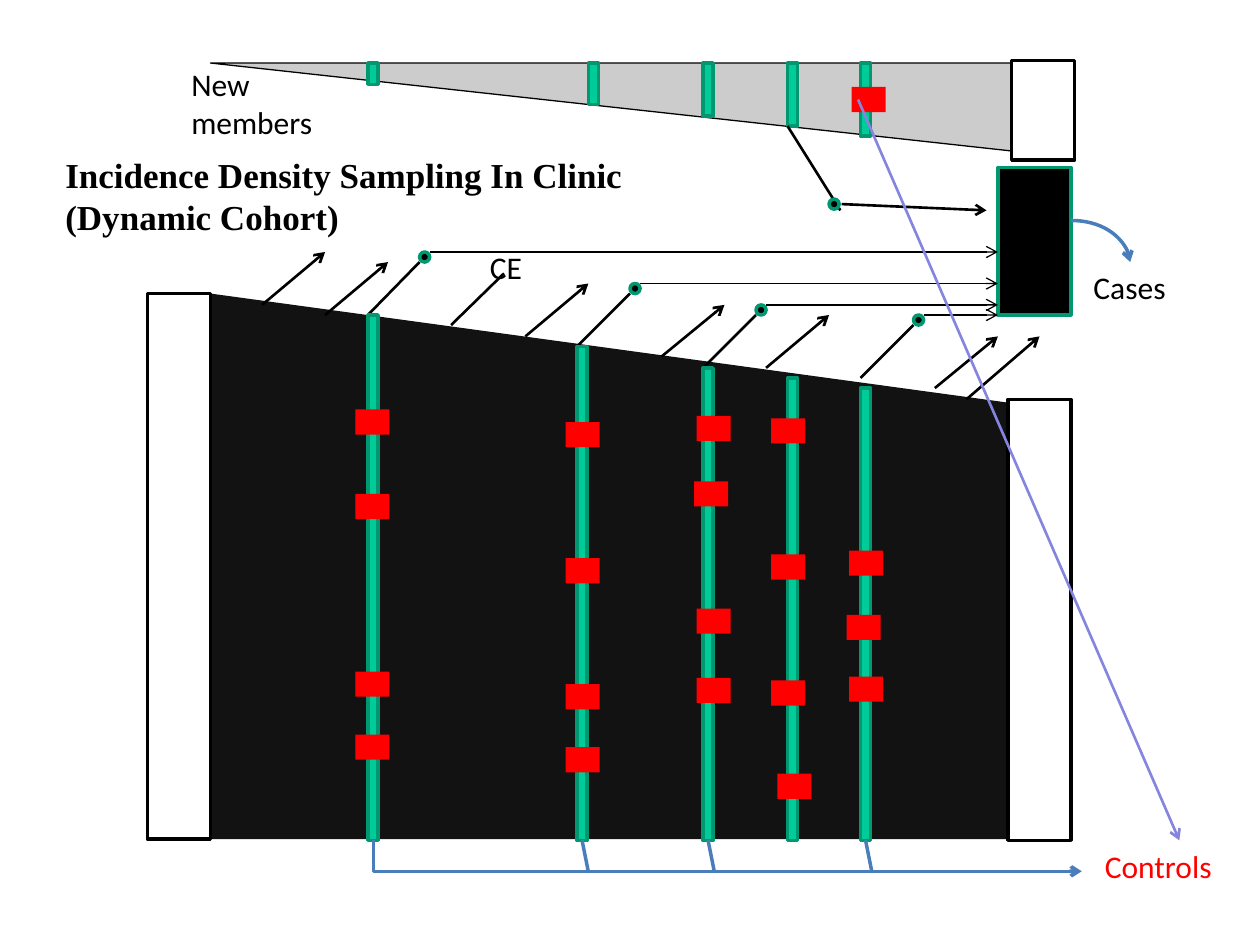
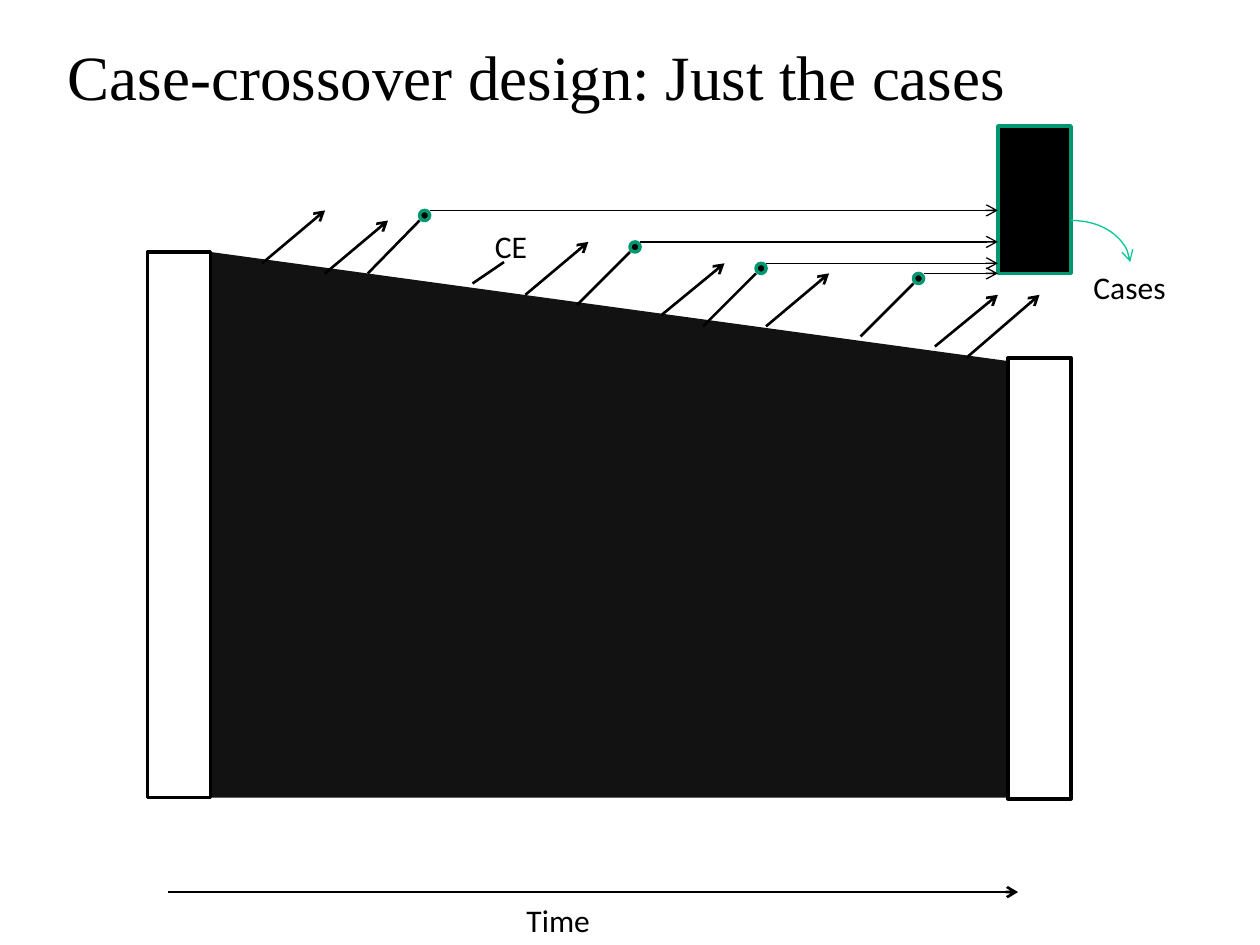
from dataclasses import dataclass
from lxml.etree import SubElement
from pptx import Presentation
from pptx.dml.color import RGBColor
from pptx.enum.shapes import MSO_CONNECTOR as LINK, MSO_SHAPE as FORM
from pptx.enum.text import MSO_AUTO_SIZE
from pptx.oxml.ns import qn
from pptx.util import Inches, Pt


@dataclass(frozen=True)
class Theme:
    black: str = "000000"
    white: str = "FFFFFF"
    dark: str = "121212"
    gray: str = "CCCCCC"
    green: str = "00CC99"
    edge: str = "009771"
    mint: str = "00C896"
    blue: str = "4A7EBB"
    violet: str = "8585E0"
    red: str = "FF0000"
    sans: str = "Calibri"
    serif: str = "Times New Roman"
    label: int = 18
    head: int = 20
    title: int = 36
    thin: float = 0.75
    mid: float = 1.5
    bold: float = 2


look = Theme()


def box(page, left, top, wide, high, fill, edge=None, form=FORM.RECTANGLE, thick=look.bold):
    item = page.shapes.add_shape(form, Inches(left), Inches(top), Inches(wide), Inches(high))
    item.shadow.inherit = False
    item.fill.solid()
    item.fill.fore_color.rgb = RGBColor.from_string(fill)
    if edge:
        item.line.color.rgb = RGBColor.from_string(edge)
        item.line.width = Pt(thick)
    else:
        item.line.fill.background()
    return item


def link(page, start, end, color=look.black, thick=look.mid, tip=True, form=None):
    kind = LINK.STRAIGHT if form is None else LINK.ELBOW
    item = page.shapes.add_connector(kind, *(Inches(n) for n in (*start, *end)))
    item.line.color.rgb = RGBColor.from_string(color)
    item.line.width = Pt(thick)
    props = item._element.spPr
    if tip:
        SubElement(props.find(qn("a:ln")), qn("a:tailEnd"), type="arrow")
    SubElement(props, qn("a:effectLst"))
    if form:
        props.find(qn("a:prstGeom")).set("prst", form)
    return item


deck = Presentation()
deck.slide_width, deck.slide_height = Inches(10), Inches(7.5)
blank = deck.slide_layouts[6]
cohort, cross = [deck.slides.add_slide(blank) for _ in range(2)]

exits = [(2.08, 2.42, 2.58, 2), (2.58, 2.5, 3.08, 2.08), (4.17, 2.67, 4.67, 2.25),
         (5.25, 2.83, 5.75, 2.42), (6.08, 2.92, 6.58, 2.5), (7.42, 3.08, 7.92, 2.67),
         (7.67, 3.17, 8.25, 2.67)]
cases = [(2.92, 2.5, 3.33, 2), (4.58, 2.75, 5, 2.25),
         (5.58, 2.92, 6, 2.42), (6.83, 3, 7.25, 2.5)]
dot = 0.08

for page, lift, hue, thick in [(cohort, 0, look.blue, look.bold),
                               (cross, 0.33, look.mint, look.thin)]:
    base = box(page, 1.67, 2.33 - lift, 6.33, 4.33, look.dark, form=FORM.FLOWCHART_MANUAL_INPUT)
    base._element.spPr.find(qn("a:xfrm")).set("flipH", "1")
    box(page, 8, 3.17 - lift, 0.5, 3.5, look.white, look.black)
    box(page, 1.17, 2.33 - lift, 0.5, 4.33, look.white, look.black)
    for x, y, right, top in exits:
        link(page, (x, y - lift), (right, top - lift))
    box(page, 7.92, 1.33 - lift, 0.58, 1.17, look.black, look.edge)
    for x, y, left, top in cases:
        link(page, (x, y - lift), (left, top + dot - lift), tip=False)
        box(page, left, top - lift, dot, dot, look.black, look.edge, FORM.OVAL)
        link(page, (left + dot, top - lift), (7.92, top - lift), thick=look.thin)
    link(page, (8.5, 1.75), (8.97, 2.08), hue, thick, form="curvedConnector2")

link(cohort, (3.58, 2.58), (4, 2.17), tip=False)
fan = box(cohort, 1.67, 0.5, 6.83, 0.75, look.gray, look.black, FORM.RIGHT_TRIANGLE, look.thin)
fan.rotation = 180
for x, high in [(2.92, 0.17), (4.67, 0.33), (5.58, 0.42), (6.25, 0.5), (6.83, 0.58)]:
    box(cohort, x, 0.5, dot, high, look.green, look.edge)
for x, top, foot in [(2.92, 2.5, None), (4.58, 2.75, 4.67), (5.58, 2.92, 5.67),
                     (6.25, 3, None), (6.83, 3.08, 6.92)]:
    bar = box(cohort, x, top, dot, 6.67 - top, look.green, look.edge)
    if foot:
        stem = link(cohort, (x + dot / 2, 6.67), (foot, 6.92), look.blue, look.bold, False)
        stem.begin_connect(bar, 2)
bend = link(cohort, (5.65, 3.98), (5.9, 9.6), look.blue, look.bold, form="bentConnector2")
frame = bend._element.spPr.find(qn("a:xfrm"))
frame.set("rot", "16200000")
frame.set("flipH", "1")

link(cohort, (6.25, 1), (6.67, 1.67), tip=False)
box(cohort, 6.58, 1.58, dot, dot, look.black, look.edge, FORM.OVAL)
link(cohort, (6.68, 1.62), (7.83, 1.67))
picks = {2.82: [3.25, 3.92, 5.33, 5.83], 4.49: [3.35, 4.43, 5.43, 5.93],
         5.51: [3.82], 5.53: [3.3, 4.83, 5.38], 6.12: [3.32, 4.4, 5.4],
         6.17: [6.14], 6.72: [4.88], 6.74: [4.37, 5.37], 6.76: [0.69]}
for x, tops in picks.items():
    for y in tops:
        box(cohort, x, y, 0.27, 0.2, look.red)
link(cohort, (6.81, 0.79), (9.36, 6.67), look.violet)
box(cohort, 8.03, 0.48, 0.5, 0.79, look.white, look.black)

link(cross, (3.75, 2.25), (4, 2.08), tip=False)
link(cross, (1.33, 7.08), (8.08, 7.08))

plain = (look.label, look.sans, look.black)
for page, words, left, top, wide, high, (size, font, color) in [
    (cohort, "CE", 3.79, 1.92, 0.46, 0.4, plain),
    (cohort, "Incidence Density Sampling In Clinic (Dynamic Cohort)", 0.42, 1.17, 5.67, 0.77,
     (look.head, look.serif, look.black)),
    (cohort, "Cases", 8.58, 2.08, 0.78, 0.4, plain),
    (cohort, "Controls", 8.67, 6.67, 1.06, 0.4, (look.label, look.sans, look.red)),
    (cohort, "New\nmembers", 1.42, 0.47, 1.17, 0.7, plain),
    (cross, "Cases", 8.58, 2.08, 0.78, 0.4, plain),
    (cross, "Time", 4.08, 7.1, 0.71, 0.4, plain),
    (cross, "CE", 3.83, 1.75, 0.46, 0.4, plain),
    (cross, "Case-crossover design: Just the cases", 0.44, 0.25, 7.65, 0.7,
     (look.title, look.serif, look.black)),
]:
    note = page.shapes.add_textbox(Inches(left), Inches(top), Inches(wide), Inches(high))
    body = note.text_frame
    body.text = words
    body.word_wrap = size == look.head
    body.auto_size = MSO_AUTO_SIZE.SHAPE_TO_FIT_TEXT
    for para in body.paragraphs:
        for run in para.runs:
            run.font.size = Pt(size)
            run.font.name = font
            run.font.bold = size == look.head
            run.font.color.rgb = RGBColor.from_string(color)

deck.save("out.pptx")
